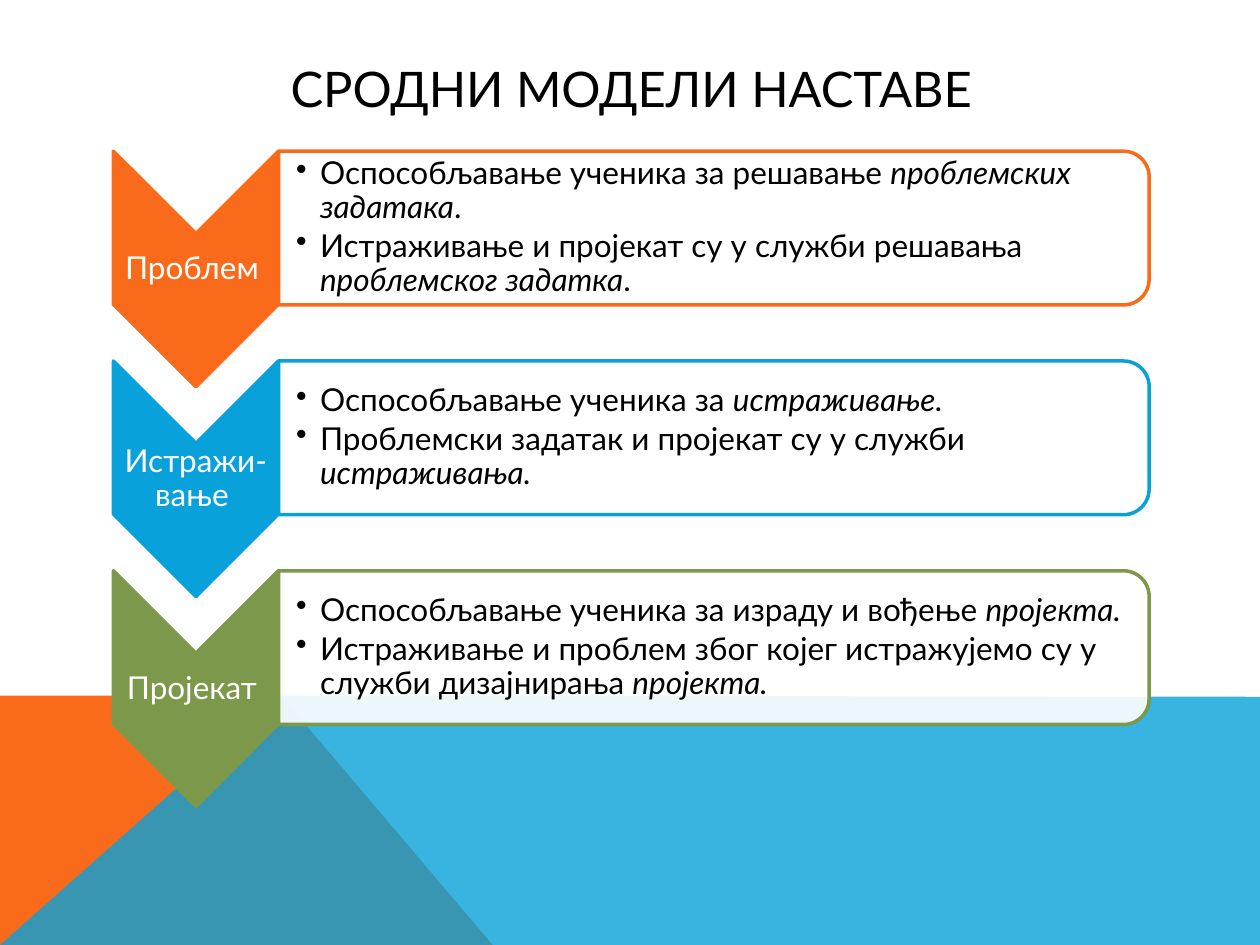
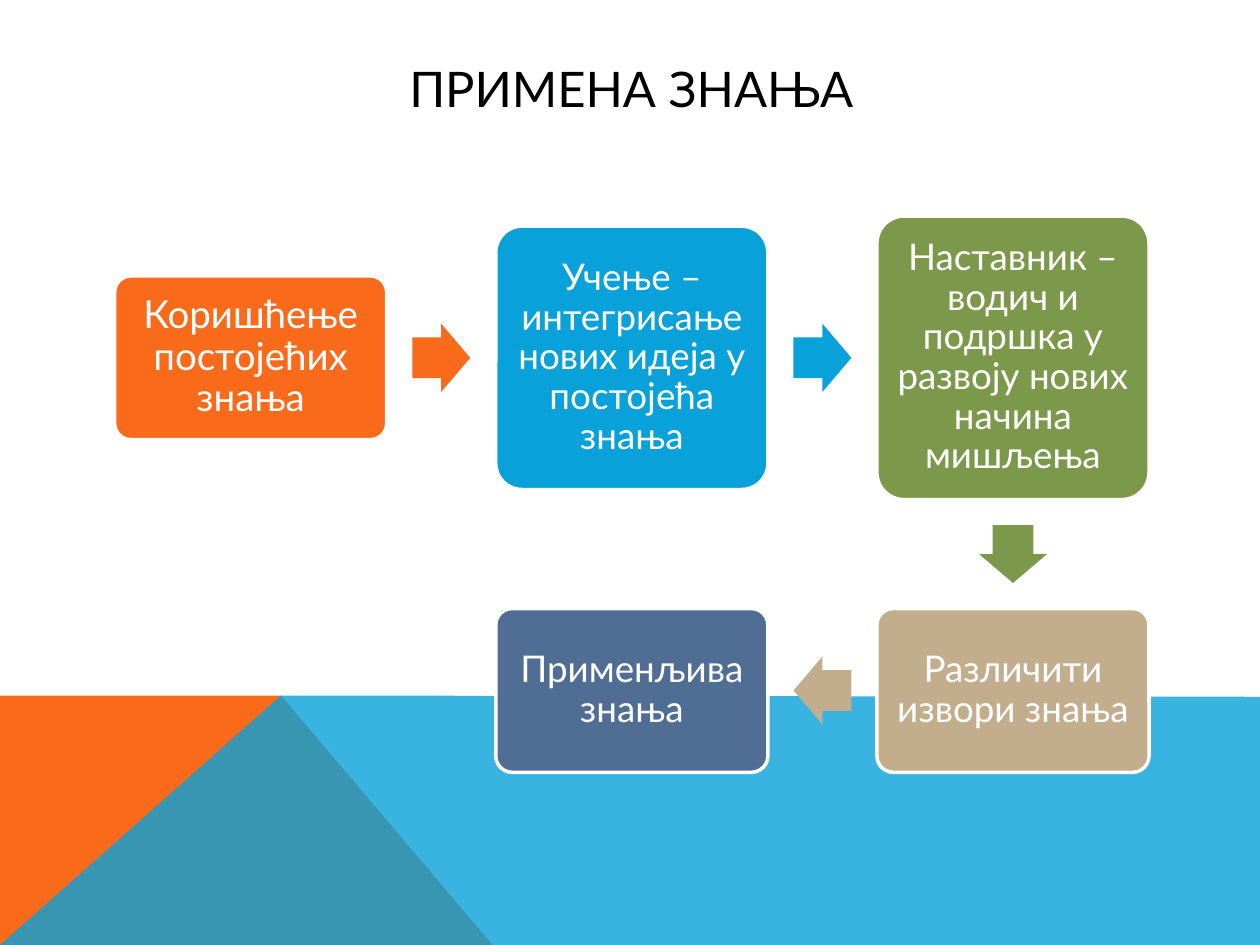
"""Builds two slides on related teaching models and on applying knowledge."""
from itertools import pairwise

from lxml import etree
from pptx import Presentation
from pptx.dml.color import RGBColor
from pptx.enum.shapes import MSO_SHAPE
from pptx.enum.text import MSO_ANCHOR, PP_ALIGN
from pptx.oxml.ns import qn
from pptx.util import Inches, Pt

CHEVRON = MSO_SHAPE.CHEVRON
PANEL = MSO_SHAPE.ROUND_2_SAME_RECTANGLE
BOX = MSO_SHAPE.ROUNDED_RECTANGLE
ARROW = MSO_SHAPE.RIGHT_ARROW
MIDDLE = MSO_ANCHOR.MIDDLE
CENTER, LEFT = PP_ALIGN.CENTER, PP_ALIGN.LEFT

ORANGE = RGBColor(0xF9, 0x6A, 0x1B)
BLUE = RGBColor(0x08, 0xA1, 0xD9)
GREEN = RGBColor(0x7C, 0x98, 0x4A)
SAND = RGBColor(0xC2, 0xAD, 0x8D)
NAVY = RGBColor(0x50, 0x6E, 0x94)
WHITE = RGBColor(0xFF, 0xFF, 0xFF)
BLACK = RGBColor(0x00, 0x00, 0x00)

FONT = "Lato"
COLUMNS, ROWS = 100, 75
MARGIN = 9
RIGHT, DOWN, BACK = 0, 90, 180

MODELS = [
    ("Проблем ", ORANGE, [
        ["Оспособљавање ученика за решавање ", "проблемских задатака", "."],
        ["Истраживање и пројекат су у служби решавања ",
         "проблемског задатка", "."]]),
    ("Истражи-вање ", BLUE, [
        ["Оспособљавање ученика за ", "истраживање."],
        ["Проблемски задатак и пројекат су у служби ", "истраживања."]]),
    ("Пројекат ", GREEN, [
        ["Оспособљавање ученика за израду и вођење ", "пројекта."],
        ["Истраживање и проблем због којег истражујемо су у служби "
         "дизајнирања ", "пројекта."]]),
]

STEPS = [
    ("Коришћење постојећих знања", 0, 0, 13, 22, ORANGE, RIGHT),
    ("Учење – интегрисање нових идеја у постојећа знања",
     1, 0, 20.9, 21, BLUE, RIGHT),
    ("Наставник – водич и подршка у развоју нових начина мишљења",
     2, 0, 22.5, 21, GREEN, DOWN),
    ("Различити извори знања", 2, 1, 13, 21, SAND, BACK),
    ("Применљива знања", 1, 1, 13, 21, NAVY, None),
]


def write(frame, paragraphs, size=18, color=BLACK, align=CENTER,
          spacing=None, after=0, insets=None, bullet_indent=None):
    """Fill a text frame; every second run of a paragraph is italic."""
    frame.word_wrap = True
    frame.vertical_anchor = MIDDLE
    if insets:
        (frame.margin_left, frame.margin_top,
         frame.margin_right, frame.margin_bottom) = map(Inches, insets)
    for number, runs in enumerate(paragraphs):
        paragraph = frame.add_paragraph() if number else frame.paragraphs[0]
        paragraph.alignment = align
        paragraph.line_spacing = spacing
        paragraph.space_after = Pt(after)
        for position, words in enumerate(runs):
            run = paragraph.add_run()
            run.text = words
            run.font.name = FONT
            run.font.size = Pt(size)
            run.font.color.rgb = color
            run.font.italic = position % 2 == 1
        if bullet_indent:
            properties = paragraph._p.get_or_add_pPr()
            properties.set("marL", str(Inches(bullet_indent)))
            properties.set("indent", str(-Inches(bullet_indent)))
            etree.SubElement(properties, qn("a:buChar")).set("char", "•")


class Deck:
    """Holds the presentation, its grid and the current slide."""

    def __init__(self):
        self.file = Presentation()
        self.file.slide_width, self.file.slide_height = Inches(10), Inches(7.5)
        self.slide = None

    def x(self, columns):
        """Turn grid columns into a length."""
        return round(self.file.slide_width * columns / COLUMNS)

    def y(self, rows):
        """Turn grid rows into a length."""
        return round(self.file.slide_height * rows / ROWS)

    def place(self, left, top, width, height):
        """Turn a grid area into slide lengths."""
        return self.x(left), self.y(top), self.x(width), self.y(height)

    def paint(self, shape, fill, line=None, opacity=100):
        """Give a shape its fill, outline and opacity."""
        shape.shadow.inherit = False
        shape.fill.solid()
        shape.fill.fore_color.rgb = fill
        if opacity < 100:
            tint = shape.element.spPr.find(".//" + qn("a:srgbClr"))
            etree.SubElement(tint, qn("a:alpha")).set("val", str(opacity * 1000))
        if line is None:
            shape.line.fill.background()
        else:
            shape.line.color.rgb = line
            shape.line.width = Pt(2)

    def new_slide(self, title):
        """Start a slide with its title and coloured base."""
        self.slide = self.file.slides.add_slide(self.file.slide_layouts[5])
        self.band([(0, 75), (0, 55.2), (22.3, 55.2), (39.1, 75)], ORANGE)
        self.band([(0, 75), (22.3, 55.2), (100, 55.3), (100, 75)], BLUE, 80)
        heading = self.slide.shapes.title
        (heading.left, heading.top,
         heading.width, heading.height) = self.place(MARGIN, 4, 82.2, 6)
        write(heading.text_frame, [[title]], size=28)

    def band(self, corners, color, opacity=100):
        """Draw a polygon through grid points."""
        points = [(self.x(column), self.y(row)) for column, row in corners]
        outline = self.slide.shapes.build_freeform(*points[0])
        outline.add_line_segments(points[1:], close=True)
        self.paint(outline.convert_to_shape(), color, opacity=opacity)

    def shape(self, kind, left, top, width, height, fill, line=None,
              opacity=100, turn=0, adjust=()):
        """Draw a preset shape that covers the given area once turned."""
        if turn % 180:
            left += (width - height) / 2
            top += (height - width) / 2
            width, height = height, width
        shape = self.slide.shapes.add_shape(
            kind, *self.place(left, top, width, height))
        shape.rotation = turn
        for index, value in enumerate(adjust):
            shape.adjustments[index] = value
        self.paint(shape, fill, line, opacity)
        return shape

    def text(self, area, paragraphs, **style):
        """Add a text box on a grid area."""
        box = self.slide.shapes.add_textbox(*self.place(*area))
        write(box.text_frame, paragraphs, **style)


def related_models(deck):
    """Build the slide with three chevrons and their panels."""
    deck.new_slide("СРОДНИ МОДЕЛИ НАСТАВЕ")
    for number, (model, color, aims) in enumerate(MODELS):
        top = 12 + number * 16.65
        deck.shape(CHEVRON, MARGIN, top, 13.1, 18.7, color, color, turn=90)
        deck.text((MARGIN, top + 6.6, 13.1, 5.6), [[model]], color=WHITE,
                  spacing=0.9, insets=[0.01] * 4)
        deck.shape(PANEL, 22.1, top, 69.1, 12.2, WHITE, color,
                   opacity=90, turn=90)
        deck.text((22.1, top + 0.6, 68.5, 11), aims, align=LEFT, spacing=0.9,
                  after=2.7, insets=(0.14, 0.01, 0.01, 0.01),
                  bullet_indent=0.19)


def applying_knowledge(deck):
    """Build the slide with five steps joined by arrows."""
    deck.new_slide("ПРИМЕНА ЗНАЊА")
    step_width, arrow_length, arrow_breadth = 21.6, 4.6, 5.4
    areas = []
    for words, column, row, height, size, color, _ in STEPS:
        area = (MARGIN + 0.1 + column * 30.25,
                28.4 + row * 26.4 - height / 2, step_width, height)
        areas.append(area)
        step = deck.shape(BOX, *area, color, WHITE, adjust=[0.1])
        write(step.text_frame, [[words]], size=size, color=WHITE,
              spacing=0.9, insets=[0.09] * 4)
    for (start, end), (*_, color, turn) in zip(pairwise(areas), STEPS):
        middle_x = (start[0] + end[0] + step_width) / 2
        middle_y = (max(start[1], end[1])
                    + min(start[1] + start[3], end[1] + end[3])) / 2
        width, height = arrow_length, arrow_breadth
        if turn == DOWN:
            width, height = height, width
        deck.shape(ARROW, middle_x - width / 2, middle_y - height / 2,
                   width, height, color, turn=turn, adjust=(0.6, 0.5))


def main():
    """Build and save the presentation."""
    deck = Deck()
    related_models(deck)
    applying_knowledge(deck)
    deck.file.save("out.pptx")


if __name__ == "__main__":
    main()
